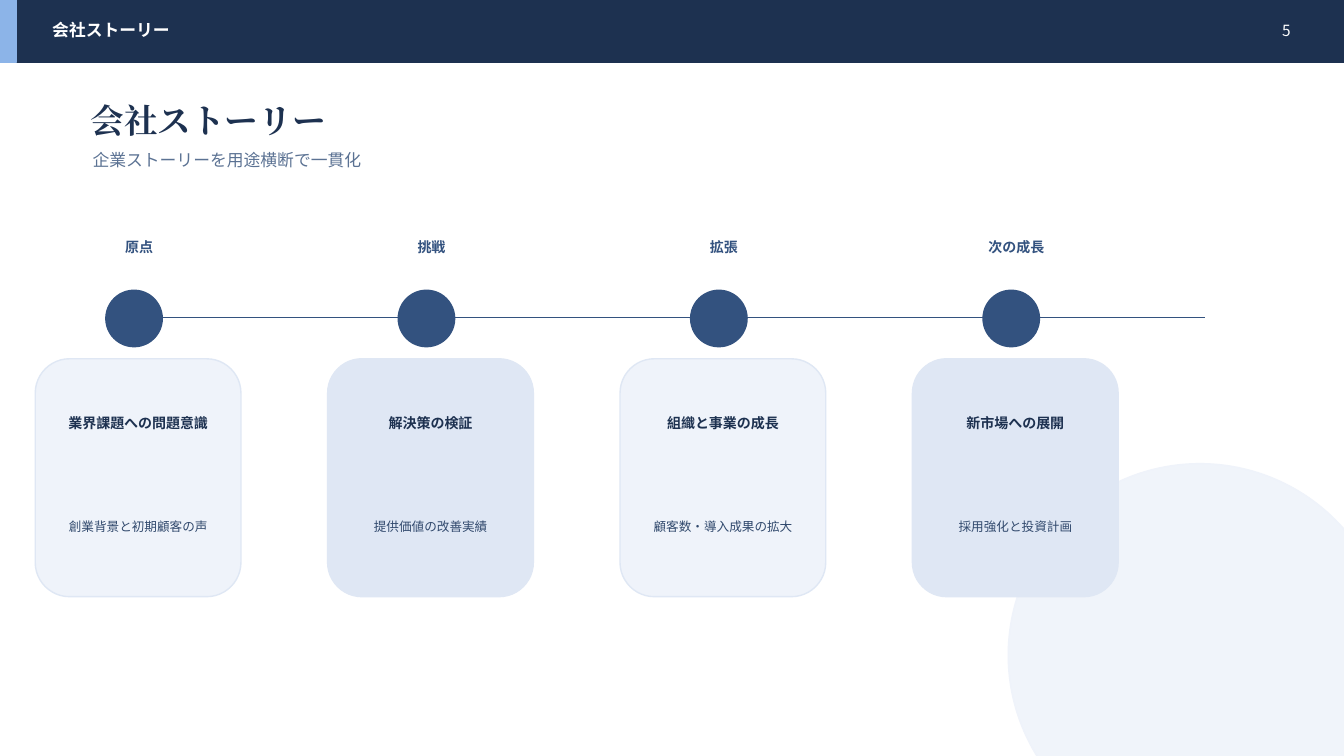
from lxml import etree
from pptx import Presentation
from pptx.dml.color import RGBColor
from pptx.enum import shapes, text
from pptx.oxml import ns
from pptx.util import Inches, Pt

NAVY = RGBColor(0x1D, 0x31, 0x50)
BLUE = RGBColor(0x33, 0x52, 0x7F)
SKY = RGBColor(0x8C, 0xB4, 0xE8)
SLATE = RGBColor(0x5B, 0x72, 0x93)
BODY = RGBColor(0x31, 0x49, 0x6D)
PALE = RGBColor(0xEF, 0xF3, 0xFA)
MIST = RGBColor(0xDF, 0xE7, 0xF4)
WHITE = RGBColor(0xFF, 0xFF, 0xFF)

SANS = "Noto Sans CJK JP"
SERIF = "Times New Roman"
LEFT, CENTER, RIGHT = text.PP_ALIGN.LEFT, text.PP_ALIGN.CENTER, text.PP_ALIGN.RIGHT
RECTANGLE = shapes.MSO_SHAPE.RECTANGLE
OVAL = shapes.MSO_SHAPE.OVAL
ROUNDED = shapes.MSO_SHAPE.ROUNDED_RECTANGLE

STAGES = [
    ("原点", "業界課題への問題意識", "創業背景と初期顧客の声"),
    ("挑戦", "解決策の検証", "提供価値の改善実績"),
    ("拡張", "組織と事業の成長", "顧客数・導入成果の拡大"),
    ("次の成長", "新市場への展開", "採用強化と投資計画"),
]
STAGE_PITCH = 2.9


def add_block(slide, kind, left, top, width, height, fill, outline=None):
    shape = slide.shapes.add_shape(
        kind, Inches(left), Inches(top), Inches(width), Inches(height))
    shape.shadow.inherit = False
    shape.fill.solid()
    shape.fill.fore_color.rgb = fill
    shape.line.color.rgb = outline or fill
    shape.line.width = Pt(1)
    return shape


def add_label(slide, left, top, width, height, words, size, color,
              bold=False, align=LEFT, font_name=SANS):
    box = slide.shapes.add_textbox(
        Inches(left), Inches(top), Inches(width), Inches(height))
    frame = box.text_frame
    frame.word_wrap = True
    frame.vertical_anchor = text.MSO_ANCHOR.MIDDLE
    paragraph = frame.paragraphs[0]
    paragraph.alignment = align
    run = paragraph.add_run()
    run.text = words
    font = run.font
    font.size = Pt(size)
    font.bold = bold
    font.color.rgb = color
    font.name = font_name
    east_asian = etree.SubElement(run._r.get_or_add_rPr(), ns.qn("a:ea"))
    east_asian.set("typeface", font_name)


def add_backdrop(slide, left, top, diameter):
    circle = add_block(slide, OVAL, left, top, diameter, diameter, PALE)
    color = circle._element.spPr.find(ns.qn("a:solidFill"))[0]
    etree.SubElement(color, ns.qn("a:alpha")).set("val", "88000")


def add_header(slide, left, top, width, height):
    add_block(slide, RECTANGLE, left, top, width, height, NAVY)
    add_block(slide, RECTANGLE, left, top, 0.16, height, SKY)
    add_label(slide, left + 0.42, top + 0.17, 8.8, 0.26,
              "会社ストーリー", 12, WHITE, bold=True)
    add_label(slide, left + width - 1.18, top + 0.17, 0.75, 0.26,
              "5", 11, WHITE, align=RIGHT)


def add_heading(slide, left, top, width):
    add_label(slide, left, top, width, 0.48,
              "会社ストーリー", 24, NAVY, bold=True, font_name=SERIF)
    add_label(slide, left + 0.02, top + 0.49, width - 0.2, 0.3,
              "企業ストーリーを用途横断で一貫化", 12, SLATE)


def add_axis(slide, left, top, width):
    axis = slide.shapes.add_connector(
        shapes.MSO_CONNECTOR.STRAIGHT,
        Inches(left), Inches(top), Inches(left + width), Inches(top))
    axis.line.color.rgb = BLUE
    axis.line.width = Pt(1)
    etree.SubElement(axis._element.spPr, ns.qn("a:effectLst"))


def add_stage(slide, left, top, width, stage, card_fill):
    label, headline, detail = stage
    add_block(slide, OVAL, left + 0.7, top + 0.55, 0.56, 0.56, BLUE)
    add_label(slide, left + 0.6, top, 0.86, 0.24,
              label, 10, BLUE, bold=True, align=CENTER)
    add_block(slide, ROUNDED, left, top + 1.23, width, 2.36, card_fill, MIST)
    add_label(slide, left + 0.16, top + 1.51, width - 0.32, 0.72,
              headline, 10, NAVY, bold=True, align=CENTER)
    add_label(slide, left + 0.16, top + 2.39, width - 0.32, 1,
              detail, 9, BODY, align=CENTER)


def add_timeline(slide, left, top):
    add_axis(slide, left + 0.9, top + 0.82, 10.7)
    for index, stage in enumerate(STAGES):
        add_stage(slide, left + index * STAGE_PITCH, top, 2.04, stage,
                  MIST if index % 2 else PALE)


def main():
    presentation = Presentation()
    presentation.slide_width = Inches(13.33)
    presentation.slide_height = Inches(7.5)
    slide = presentation.slides.add_slide(presentation.slide_layouts[6])
    add_backdrop(slide, 10, 4.6, 3.8)
    add_header(slide, 0, 0, 13.33, 0.62)
    add_heading(slide, 0.8, 0.95, 11.4)
    add_timeline(slide, 0.35, 2.33)
    presentation.save("out.pptx")


if __name__ == "__main__":
    main()
